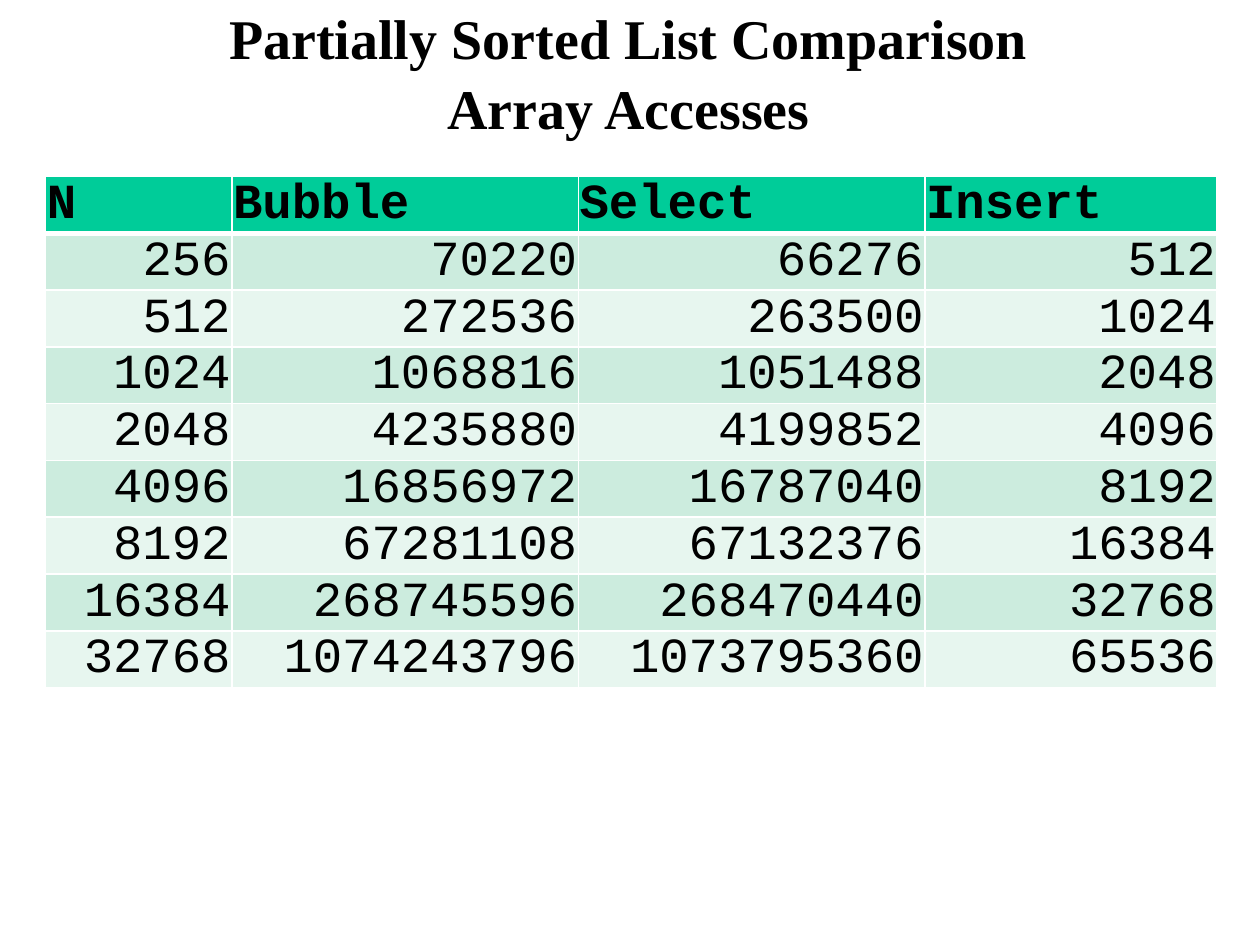
"""Build a slide comparing array accesses of three sorts on a partially sorted list."""
from lxml.etree import SubElement
from pptx import Presentation
from pptx.dml.color import RGBColor
from pptx.enum.text import MSO_ANCHOR, MSO_AUTO_SIZE, PP_ALIGN
from pptx.oxml.ns import qn
from pptx.util import Pt

BLACK = RGBColor(0x00, 0x00, 0x00)
WHITE = RGBColor(0xFF, 0xFF, 0xFF)
HEADER_GREEN = RGBColor(0x00, 0xCC, 0x99)
BAND_GREEN = RGBColor(0xCC, 0xEC, 0xDE)
PALE_GREEN = RGBColor(0xE7, 0xF6, 0xEF)

ROWS = [
    ("N", "Bubble", "Select", "Insert"),
    (256, 70220, 66276, 512),
    (512, 272536, 263500, 1024),
    (1024, 1068816, 1051488, 2048),
    (2048, 4235880, 4199852, 4096),
    (4096, 16856972, 16787040, 8192),
    (8192, 67281108, 67132376, 16384),
    (16384, 268745596, 268470440, 32768),
    (32768, 1074243796, 1073795360, 65536),
]
COLUMN_WIDTHS = (106.5, 198, 198, 167)


def style_font(para, name, size, bold):
    para.font.name = name
    para.font.size = Pt(size)
    para.font.bold = bold
    para.font.color.rgb = BLACK


def add_borders(cell, top, bottom):
    properties = cell._tc.get_or_add_tcPr()
    for side, width in (("L", 1), ("R", 1), ("T", top), ("B", bottom)):
        line = SubElement(properties, qn(f"a:ln{side}"), w=str(Pt(width)))
        fill = SubElement(line, qn("a:solidFill"))
        SubElement(fill, qn("a:srgbClr"), val=str(WHITE))


deck = Presentation()
deck.slide_width, deck.slide_height = Pt(720), Pt(540)
page = deck.slides.add_slide(deck.slide_layouts[5])
page.background.fill.solid()
page.background.fill.fore_color.rgb = WHITE

title = page.shapes.title
title.left, title.top, title.width, title.height = Pt(53.3), Pt(4.3), Pt(612), Pt(72.7)
title.text_frame.text = "Partially Sorted List Comparison\vArray Accesses"
title.text_frame.word_wrap = True
title.text_frame.auto_size = MSO_AUTO_SIZE.NONE
title.text_frame.vertical_anchor = MSO_ANCHOR.MIDDLE
heading = title.text_frame.paragraphs[0]
heading.alignment = PP_ALIGN.CENTER
heading.line_spacing = 1.04
style_font(heading, "Times New Roman", 32, True)

frame = page.shapes.add_table(
    len(ROWS), len(COLUMN_WIDTHS), Pt(26), Pt(100.8), Pt(669.5), Pt(308)
)
table = frame.table
for column, width in zip(table.columns, COLUMN_WIDTHS):
    column.width = Pt(width)

for row_index, values in enumerate(ROWS):
    is_header = row_index == 0
    table.rows[row_index].height = Pt(32.4 if is_header else 29.5)
    band = BAND_GREEN if row_index % 2 else PALE_GREEN
    for column_index, value in enumerate(values):
        cell = table.cell(row_index, column_index)
        cell.text = str(value)
        cell.vertical_anchor = MSO_ANCHOR.BOTTOM
        cell.margin_left = cell.margin_right = cell.margin_top = Pt(0.75)
        cell.margin_bottom = Pt(0)
        add_borders(cell, 3 if row_index == 1 else 1, 3 if is_header else 1)
        cell.fill.solid()
        cell.fill.fore_color.rgb = HEADER_GREEN if is_header else band
        para = cell.text_frame.paragraphs[0]
        para.alignment = PP_ALIGN.LEFT if is_header else PP_ALIGN.RIGHT
        style_font(para, "Courier New", 28, is_header)
frame.height = Pt(308)

deck.save("out.pptx")
